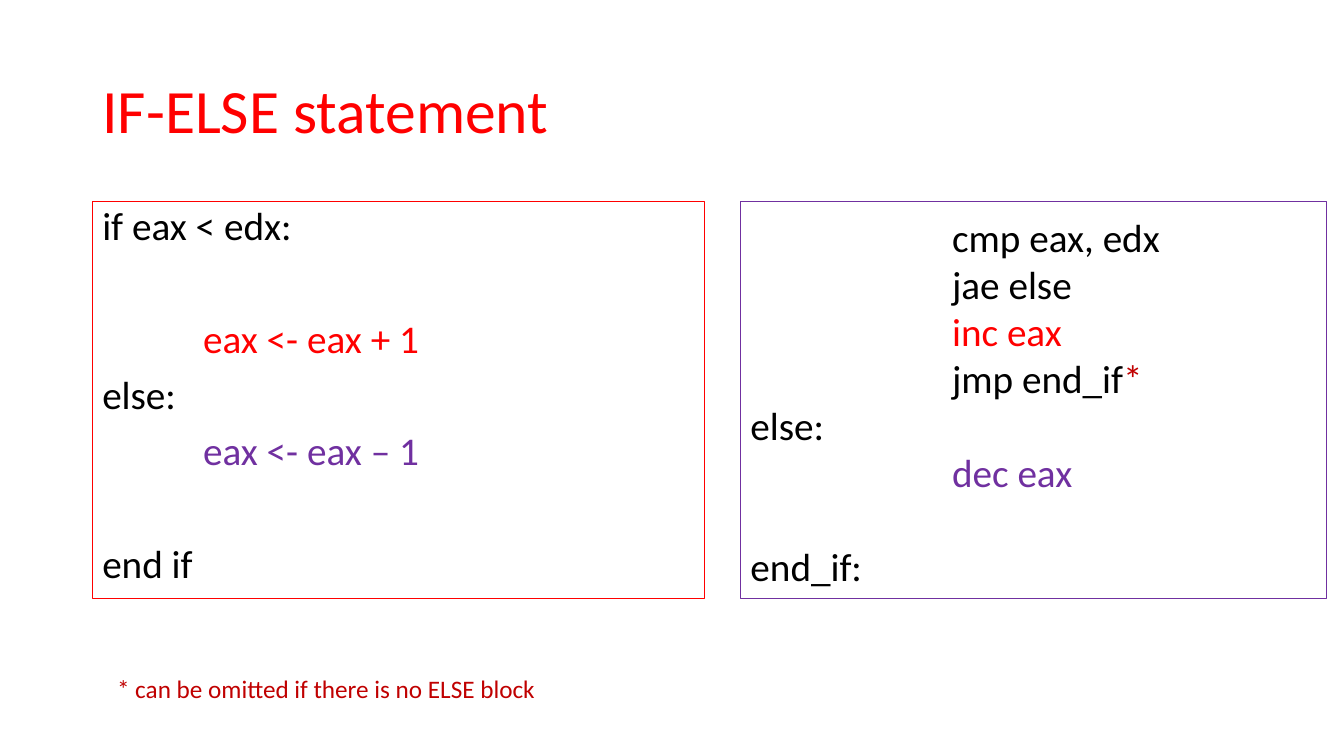
from dataclasses import dataclass

from pptx import Presentation
from pptx.dml.color import RGBColor
from pptx.enum import shapes, text
from pptx.util import Pt

RED = RGBColor(0xFF, 0x00, 0x00)
DARK_RED = RGBColor(0xC0, 0x00, 0x00)
PURPLE = RGBColor(0x70, 0x30, 0xA0)
BLACK = RGBColor(0x00, 0x00, 0x00)
FONT = "Calibri"
TAB = 72  # one indent step


@dataclass
class Line:
    words: str
    color: RGBColor = BLACK
    depth: int = 0
    gap: float = 0  # extra space above
    mark: str = ""


@dataclass
class Panel:
    left: float
    width: float
    edge: RGBColor
    inset: float
    pitch: float
    space: float
    lines: list[Line]


PANELS = [
    Panel(66, 437, RED, 3.6, 0.9, 10, [
        Line("if eax < edx:"),
        Line("eax <- eax + 1", RED, 1, gap=40.2),
        Line("else:"),
        Line("eax <- eax – 1", PURPLE, 1),
        Line("end if", gap=40.2),
    ]),
    Panel(529, 418.5, PURPLE, 8, 1.0, 0, [
        Line("cmp eax, edx", depth=2),
        Line("jae else", depth=2),
        Line("inc eax", RED, 2),
        Line("jmp end_if", depth=2, mark="*"),
        Line("else:"),
        Line("dec eax", PURPLE, 2),
        Line("end_if:", gap=33.6),
    ]),
]


def style(run, size: float, color: RGBColor) -> None:
    run.font.name = FONT
    run.font.size = Pt(size)
    run.font.color.rgb = color


def draw_panel(slide, panel: Panel) -> None:
    box = slide.shapes.add_shape(
        shapes.MSO_SHAPE.RECTANGLE,
        Pt(panel.left), Pt(144), Pt(panel.width), Pt(283.5))
    box.shadow.inherit = False
    box.fill.background()
    box.line.color.rgb = panel.edge
    box.line.width = Pt(0.75)
    frame = box.text_frame
    frame.word_wrap = True
    frame.vertical_anchor = text.MSO_ANCHOR.TOP
    frame.margin_top = Pt(panel.inset)
    frame.text = "\n".join(line.words for line in panel.lines)
    for row, (para, line) in enumerate(zip(frame.paragraphs, panel.lines)):
        para.alignment = text.PP_ALIGN.LEFT
        para.line_spacing = panel.pitch
        para.space_before = Pt(panel.space + line.gap if row else 0)
        props = para._p.get_or_add_pPr()
        props.set("marL", str(Pt(TAB * line.depth)))
        props.set("indent", "0")
        style(para.runs[0], 28, line.color)
        if line.mark:
            mark = para.add_run()
            mark.text = line.mark
            style(mark, 28, DARK_RED)


def main() -> None:
    deck = Presentation()
    deck.slide_width, deck.slide_height = Pt(960), Pt(540)
    slide = deck.slides.add_slide(deck.slide_layouts[5])

    # Title
    title = slide.shapes.title
    title.left, title.top = Pt(66), Pt(28.75)
    title.width, title.height = Pt(828), Pt(104.4)
    title.text_frame.text = "IF-ELSE statement"
    title.text_frame.vertical_anchor = text.MSO_ANCHOR.MIDDLE
    head = title.text_frame.paragraphs[0]
    head.alignment = text.PP_ALIGN.LEFT
    head.line_spacing = 0.9
    style(head.runs[0], 44, RED)

    # Pseudocode and assembly
    for panel in PANELS:
        draw_panel(slide, panel)

    # Footnote
    note = slide.shapes.add_textbox(Pt(76.5), Pt(477.5), Pt(317.5), Pt(29))
    note.text_frame.word_wrap = False
    note.text_frame.text = "* can be omitted if there is no ELSE block"
    style(note.text_frame.paragraphs[0].runs[0], 18, DARK_RED)

    deck.save("out.pptx")


if __name__ == "__main__":
    main()
